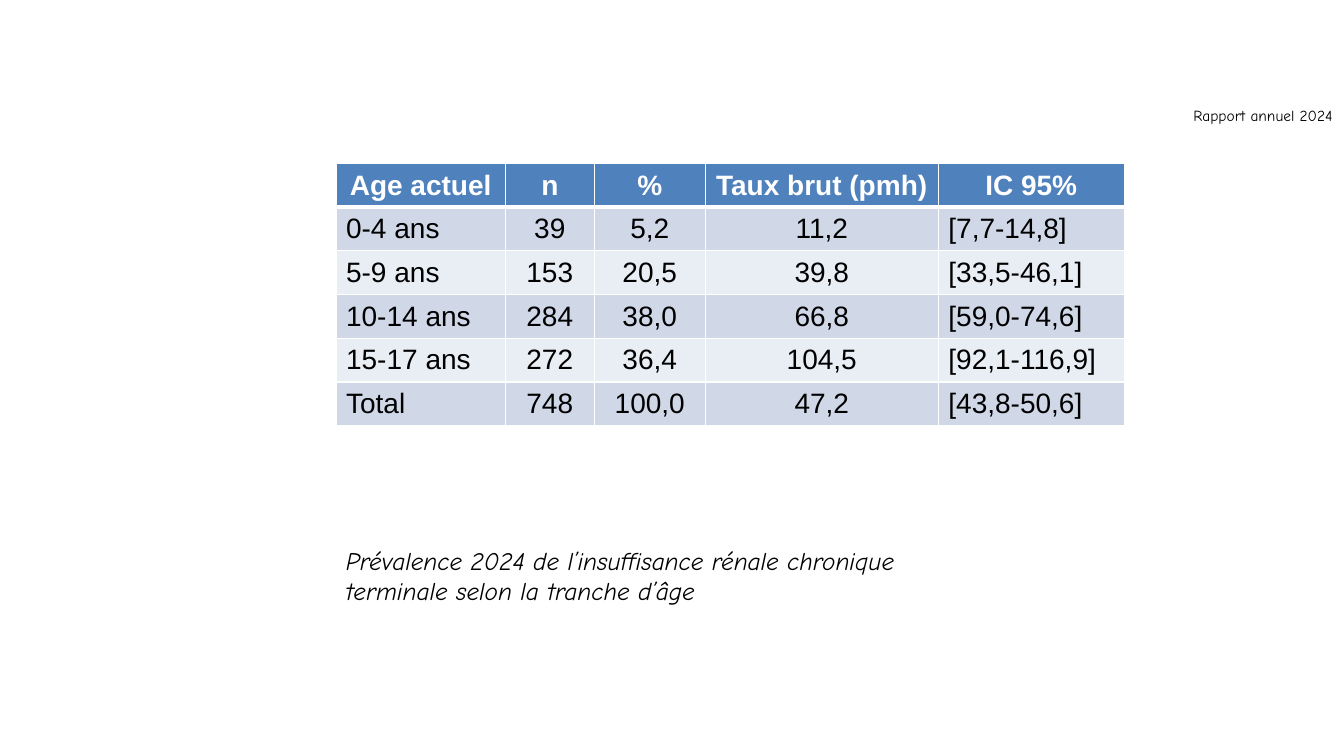
from dataclasses import dataclass

from lxml import etree
from pptx import Presentation
from pptx import util as u
from pptx.dml import color
from pptx.enum import text
from pptx.oxml import ns


@dataclass(frozen=True)
class Theme:
    black: str = "000000"
    white: str = "FFFFFF"
    header: str = "4F81BD"
    bands: tuple = ("D0D8E8", "E9EDF4")
    table_font: str = "Arial"
    text_font: str = "Comic Neue"
    small: int = 11
    caption: int = 18
    cell: int = 20
    thin: int = 1
    thick: int = 3


def write(frame, content, font, size, ink, bold=False, italic=False, align=None):
    paragraph = frame.paragraphs[0]
    paragraph.alignment = align
    run = paragraph.add_run()
    run.text = content
    run.font.name = font
    run.font.size = u.Pt(size)
    run.font.bold = bold
    run.font.italic = italic
    run.font.color.rgb = color.RGBColor.from_string(ink)


class SlideBuilder:
    def __init__(self, slide, theme):
        self.slide = slide
        self.theme = theme

    def label(self, content, left, top, width, height, size, wrap=True, italic=False):
        shape = self.slide.shapes.add_textbox(*map(u.Pt, (left, top, width, height)))
        frame = shape.text_frame
        frame.word_wrap = wrap
        frame.auto_size = text.MSO_AUTO_SIZE.SHAPE_TO_FIT_TEXT
        write(frame, content, self.theme.text_font, size, self.theme.black, italic=italic)

    def borders(self, cell, top, bottom):
        properties = cell._tc.get_or_add_tcPr()
        thin = self.theme.thin
        for side, width in (("L", thin), ("R", thin), ("T", top), ("B", bottom)):
            line = etree.SubElement(properties, ns.qn(f"a:ln{side}"), w=str(u.Pt(width)))
            fill = etree.SubElement(line, ns.qn("a:solidFill"))
            etree.SubElement(fill, ns.qn("a:srgbClr"), val=self.theme.white)

    def table(self, rows, left, top, widths, row_height, left_columns):
        theme = self.theme
        table = self.slide.shapes.add_table(
            len(rows), len(widths), u.Pt(left), u.Pt(top),
            u.Pt(sum(widths)), u.Pt(row_height * len(rows))).table
        for column, width in zip(table.columns, widths):
            column.width = u.Pt(width)
        for i, values in enumerate(rows):
            table.rows[i].height = u.Pt(row_height)
            is_header = i == 0
            for j, value in enumerate(values):
                cell = table.cell(i, j)
                cell.vertical_anchor = text.MSO_ANCHOR.MIDDLE
                # The thick rule separates the header from the body
                self.borders(cell, theme.thick if i == 1 else theme.thin,
                             theme.thick if is_header else theme.thin)
                cell.fill.solid()
                cell.fill.fore_color.rgb = color.RGBColor.from_string(
                    theme.header if is_header else theme.bands[(i - 1) % 2])
                centred = is_header or j not in left_columns
                write(cell.text_frame, value, theme.table_font, theme.cell,
                      theme.white if is_header else theme.black, bold=is_header,
                      align=text.PP_ALIGN.CENTER if centred else text.PP_ALIGN.LEFT)


PREVALENCE = [
    ("Age actuel", "n", "%", "Taux brut (pmh)", "IC 95%"),
    ("0-4 ans", "39", "5,2", "11,2", "[7,7-14,8]"),
    ("5-9 ans", "153", "20,5", "39,8", "[33,5-46,1]"),
    ("10-14 ans", "284", "38,0", "66,8", "[59,0-74,6]"),
    ("15-17 ans", "272", "36,4", "104,5", "[92,1-116,9]"),
    ("Total", "748", "100,0", "47,2", "[43,8-50,6]"),
]


def main():
    presentation = Presentation()
    presentation.slide_width = u.Pt(960)
    presentation.slide_height = u.Pt(540)
    theme = Theme()
    builder = SlideBuilder(presentation.slides.add_slide(presentation.slide_layouts[6]), theme)

    # Report name
    builder.label("Rapport annuel 2024", 845.3, 72, 121.7, 20.6, theme.small, wrap=False)

    # Caption
    builder.label("Prévalence 2024 de l’insuffisance rénale chronique terminale "
                  "selon la tranche d’âge", 240, 386, 480, 51, theme.caption, italic=True)

    # Prevalence by age group
    builder.table(PREVALENCE, 240, 116.7, (121, 63.5, 79.3, 166.5, 132.7), 31.2,
                  left_columns=(0, 4))

    presentation.save("out.pptx")


if __name__ == "__main__":
    main()
